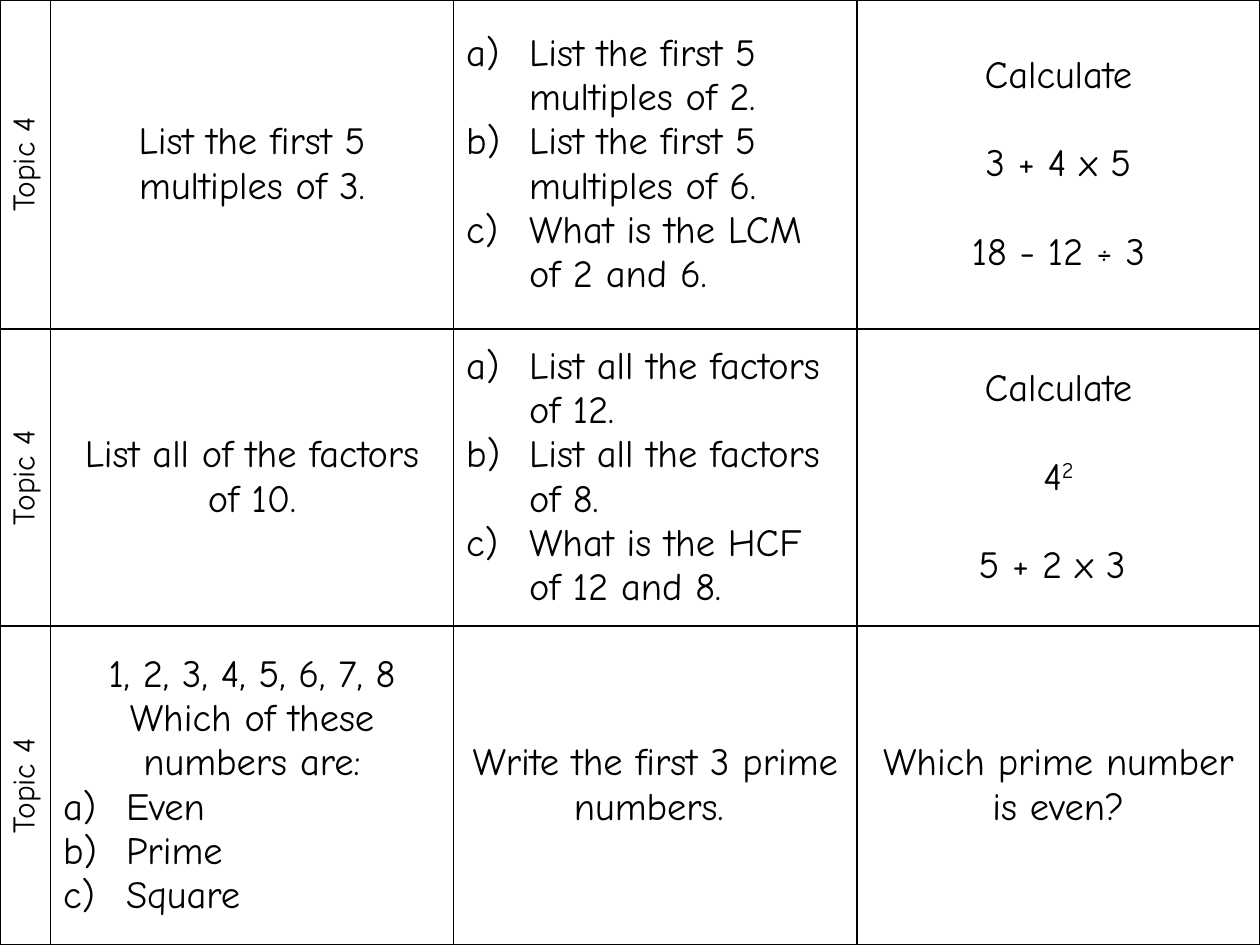
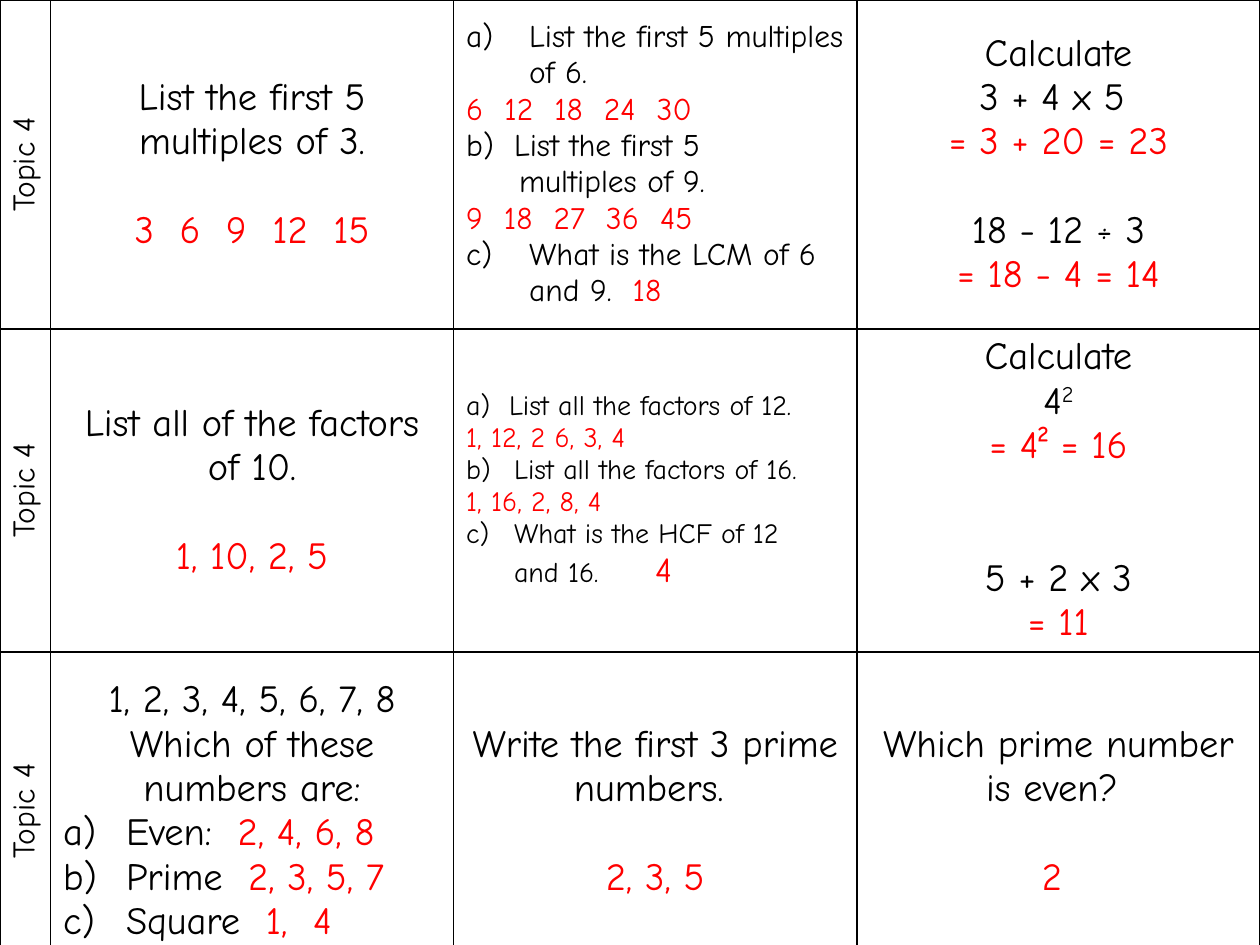
from dataclasses import dataclass

from lxml import etree
from pptx import Presentation
from pptx.dml.color import RGBColor
from pptx.enum.text import MSO_ANCHOR, PP_ALIGN
from pptx.oxml.ns import qn
from pptx.util import Inches, Pt

MIDDLE = MSO_ANCHOR.MIDDLE
CENTER = PP_ALIGN.CENTER
LEFT = PP_ALIGN.LEFT


@dataclass(frozen=True)
class Theme:
    font: str = "Comic Neue"
    ink: str = "000000"
    answer: str = "FF0000"
    border: float = 1
    topic: float = 18
    question: float = 22
    medium: float = 18
    small: float = 16
    emphasis: float = 20
    leading: float = 1.15


@dataclass(frozen=True)
class Line:
    text: str = ""
    answer: str = ""
    power: str = ""
    number: int = 0
    hang: float = 0.5
    first: float = 0
    tab: float = 0
    gap: int = 0
    left: bool = False
    size: float = 0
    answer_size: float = 0


theme = Theme()
SLIDE_WIDTH, SLIDE_HEIGHT = 10, 7.5
COLUMN_SHARES = [0.04, 0.32, 0.32, 0.32]
ROW_HEIGHTS = [2.61, 2.36, 2.53]
BORDER_SIDES = ["a:lnL", "a:lnR", "a:lnT", "a:lnB"]
TOPIC = "Topic 4"
MEDIUM = {"size": theme.medium, "left": True}
SMALL = {"size": theme.small, "left": True}

question_grid = [
    [
        [Line("List the first 5 multiples of 3.")],
        [
            Line("List the first 5 multiples of 2.", number=1),
            Line("List the first 5 multiples of 6.", number=2),
            Line("What is the LCM of 2 and 6.", number=3),
        ],
        [Line("Calculate"), Line("3 + 4 x 5", gap=1), Line("18 - 12 ÷ 3", gap=1)],
    ],
    [
        [Line("List all of the factors of 10.")],
        [
            Line("List all the factors of 12.", number=1),
            Line("List all the factors of 8.", number=2),
            Line("What is the HCF of 12 and 8.", number=3),
        ],
        [Line("Calculate"), Line("4", power="2", gap=1), Line("5 + 2 x 3 ", gap=1)],
    ],
    [
        [
            Line("1, 2, 3, 4, 5, 6, 7, 8"),
            Line("Which of these numbers are:"),
            Line("Even", number=1),
            Line("Prime", number=2),
            Line("Square", number=3),
        ],
        [Line("Write the first 3 prime numbers. ")],
        [Line("Which prime number is even?")],
    ],
]

answer_grid = [
    [
        [
            Line("List the first 5 multiples of 3."),
            Line(answer="3  6  9  12  15", gap=1),
        ],
        [
            Line("List the first 5 multiples of 6.", number=1, **MEDIUM),
            Line(answer="6  12  18  24  30", **MEDIUM),
            Line("List the first 5", number=2, hang=0.38, **MEDIUM),
            Line("multiples of 9.", first=0.42, **MEDIUM),
            Line(answer="9  18  27  36  45", **MEDIUM),
            Line("What is the LCM of 6 and 9.  ", "18", number=3, **MEDIUM),
        ],
        [
            Line("Calculate"),
            Line("3 + 4 x 5 "),
            Line(answer="= 3 + 20 = 23"),
            Line("18 - 12 ÷ 3", gap=1),
            Line(answer="= 18 - 4 = 14"),
        ],
    ],
    [
        [
            Line("List all of the factors of 10."),
            Line(answer="1, 10, 2, 5", gap=1),
        ],
        [
            Line("List all the factors of 12.", number=1, hang=0.34, **SMALL),
            Line(answer="1, 12, 2 6, 3, 4", **SMALL),
            Line("List all the factors of 16.", number=2, hang=0.38, **SMALL),
            Line(answer="1, 16, 2, 8, 4", **SMALL),
            Line("What is the HCF of 12", number=3, hang=0.38, **SMALL),
            Line("and 16.\t", "4", first=0.38, tab=1.57,
                 answer_size=theme.emphasis, **SMALL),
        ],
        [
            Line("Calculate"),
            Line("4", power="2"),
            Line(answer="= 4² = 16"),
            Line("5 + 2 x 3", gap=2),
            Line(answer="= 11"),
        ],
    ],
    [
        [
            Line("1, 2, 3, 4, 5, 6, 7, 8"),
            Line("Which of these numbers are:"),
            Line("Even:  ", "2, 4, 6, 8", number=1),
            Line("Prime  ", "2, 3, 5, 7", number=2),
            Line("Square  ", "1,  4", number=3),
        ],
        [
            Line("Write the first 3 prime numbers. "),
            Line(answer="2, 3, 5", gap=1),
        ],
        [
            Line("Which prime number is even? "),
            Line(answer="2 ", gap=1),
        ],
    ],
]


def frame_cell(cell):
    properties = cell._tc.get_or_add_tcPr()
    for side in BORDER_SIDES:
        border = etree.SubElement(properties, qn(side), w=str(Pt(theme.border)))
        fill = etree.SubElement(border, qn("a:solidFill"))
        etree.SubElement(fill, qn("a:srgbClr"), val=theme.ink)
    cell.fill.background()


def write_line(para, line, previous):
    size = line.size or theme.question
    para.alignment = LEFT if line.left or line.number else CENTER
    if line.gap:
        para.space_before = Pt(line.gap * size * theme.leading)
    properties = para._p.get_or_add_pPr()
    if line.number:
        properties.set("marL", str(Inches(line.hang)))
        properties.set("indent", str(-Inches(line.hang)))
        etree.SubElement(properties, qn("a:buFont"), typeface=theme.font)
        bullet = etree.SubElement(properties, qn("a:buAutoNum"), type="alphaLcParenR")
        if line.number > 1 and not previous.number:
            bullet.set("startAt", str(line.number))
    elif line.first:
        properties.set("marL", "0")
        properties.set("indent", str(Inches(line.first)))
    if line.tab:
        stops = etree.SubElement(properties, qn("a:tabLst"))
        etree.SubElement(stops, qn("a:tab"), pos=str(Inches(line.tab)), algn="l")
    pieces = [
        (line.text, theme.ink, size, "0"),
        (line.power, theme.ink, size, "30000"),
        (line.answer, theme.answer, line.answer_size or size, "0"),
    ]
    for text, color, points, baseline in pieces:
        if text:
            span = para.add_run()
            span.text = text
            span.font.name = theme.font
            span.font.size = Pt(points)
            span.font.color.rgb = RGBColor.from_string(color)
            span._r.get_or_add_rPr().set("baseline", baseline)


deck = Presentation()
deck.slide_width = Inches(SLIDE_WIDTH)
deck.slide_height = Inches(SLIDE_HEIGHT)

for grid in [question_grid, answer_grid]:
    page = deck.slides.add_slide(deck.slide_layouts[6])
    table = page.shapes.add_table(
        len(ROW_HEIGHTS), len(COLUMN_SHARES), 0, 0, deck.slide_width, deck.slide_height
    ).table
    table.first_row = False
    table.horz_banding = False
    for column, share in zip(table.columns, COLUMN_SHARES):
        column.width = Inches(SLIDE_WIDTH * share)
    for row, height, questions in zip(table.rows, ROW_HEIGHTS, grid):
        row.height = Inches(height)
        topic_lines = [Line(TOPIC, size=theme.topic)]
        for index, (cell, lines) in enumerate(zip(row.cells, [topic_lines, *questions])):
            frame_cell(cell)
            if index == 0:
                cell._tc.get_or_add_tcPr().set("vert", "vert270")
            else:
                cell.vertical_anchor = MIDDLE
            frame = cell.text_frame
            previous = Line()
            for position, line in enumerate(lines):
                para = frame.add_paragraph() if position else frame.paragraphs[0]
                write_line(para, line, previous)
                previous = line

deck.save("out.pptx")
